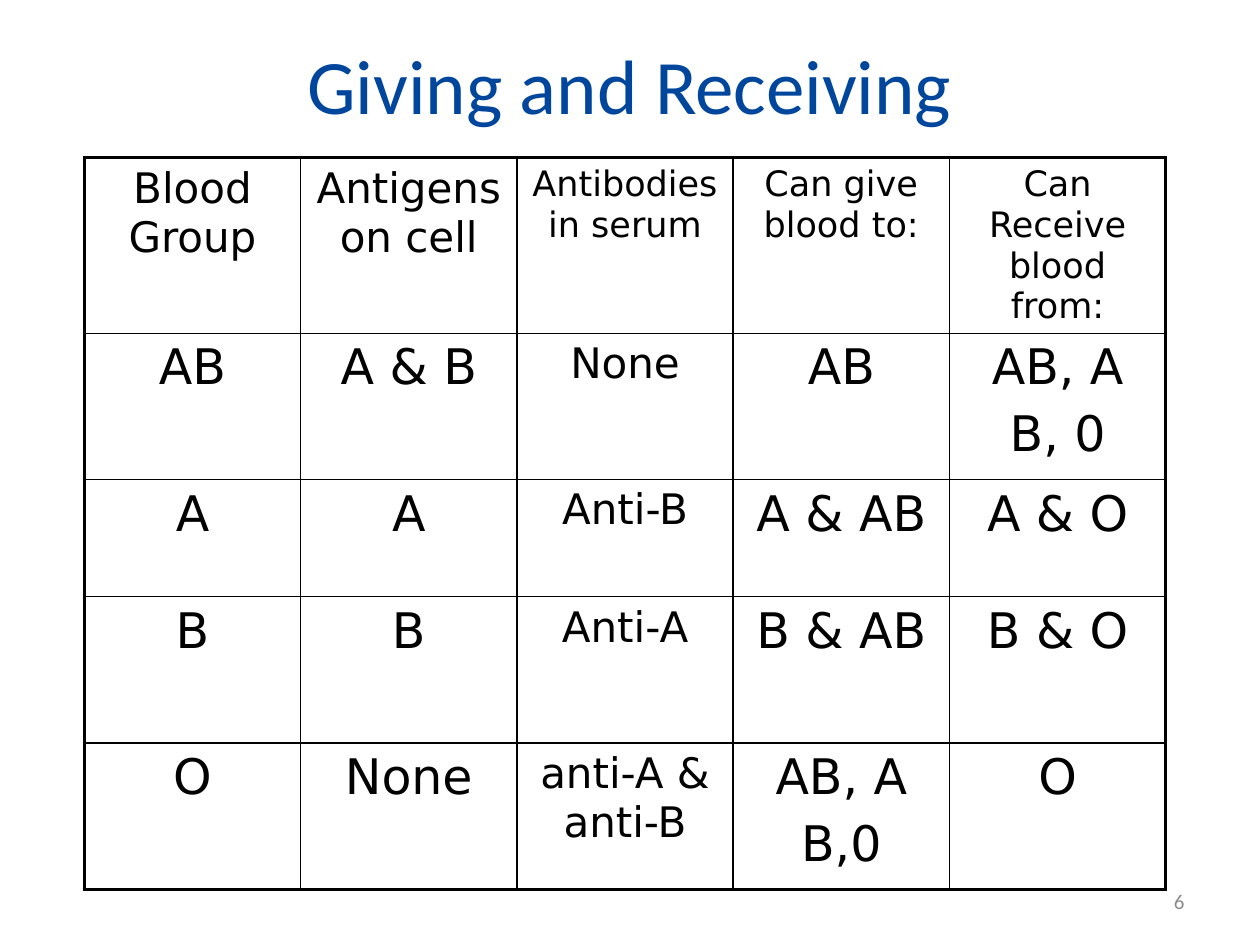
from lxml.etree import SubElement
from pptx import Presentation
from pptx.dml.color import RGBColor
from pptx.enum.text import MSO_ANCHOR, PP_ALIGN
from pptx.oxml.ns import qn
from pptx.util import Cm, Pt

TITLE = "Giving and Receiving"
NUMBER = "6"
ROWS = [
    ["Blood Group", "Antigens on cell", "Antibodies in serum",
     "Can give blood to:", "Can Receive blood from:"],
    ["AB", "A & B", "None", "AB", "AB, A\nB, 0"],
    ["A", "A", "Anti-B", "A & AB", "A & O"],
    ["B", "B", "Anti-A", "B & AB", "B & O"],
    ["O", "None", "anti-A & anti-B", "AB, A\nB,0", "O"],
]
HEAD = [24, 24, 20, 20, 20]
BODY = [28, 28, 24, 28, 28]
HEIGHTS = [3.4, 2.95, 2.36, 2.95, 2.95]
WIDTH = 4.36
THIN, THICK = 1, 2.25
BLACK, BLUE, GREY = "000000", "00469C", "8C8C8C"


def style(frame, size, font, color, align, gap=0):
    for para in frame.paragraphs:
        para.alignment = align
        para.space_before = Pt(size * gap)
        for run in para.runs:
            run.font.size = Pt(size)
            run.font.name = font
            run.font.color.rgb = RGBColor.from_string(color)


def place(shape, left, top, width, height):
    shape.left, shape.top = Cm(left), Cm(top)
    shape.width, shape.height = Cm(width), Cm(height)


def border(cell, side, width):
    line = SubElement(cell._tc.get_or_add_tcPr(), qn("a:ln" + side),
                      w=str(Pt(width)))
    fill = SubElement(line, qn("a:solidFill"))
    SubElement(fill, qn("a:srgbClr"), val=BLACK)


def add_grid(slide):
    count, span = len(ROWS), len(HEAD)
    frame = slide.shapes.add_table(count, span, Cm(1.7), Cm(3.18),
                                   Cm(WIDTH * span), Cm(sum(HEIGHTS)))
    table = frame.table
    table.first_row = table.horz_banding = False
    for col in table.columns:
        col.width = Cm(WIDTH)
    for r, words in enumerate(ROWS):
        table.rows[r].height = Cm(HEIGHTS[r])
        sizes = BODY if r else HEAD
        for c, text in enumerate(words):
            cell = table.cell(r, c)
            cell.text_frame.text = text
            style(cell.text_frame, sizes[c], "DejaVu Sans", BLACK,
                  PP_ALIGN.CENTER, 0.2)
            edges = {"L": c == 0, "R": c == span - 1,
                     "T": r == 0, "B": r == count - 1}
            for side, outer in edges.items():
                border(cell, side, THICK if outer else THIN)
            cell.fill.background()


def main():
    deck = Presentation()
    deck.slide_width, deck.slide_height = Cm(25.4), Cm(19.05)
    slide = deck.slides.add_slide(deck.slide_layouts[5])

    title = slide.shapes.title
    place(title, 1.9, 0.64, 21.6, 2.1)
    title.text_frame.text = TITLE
    title.text_frame.vertical_anchor = MSO_ANCHOR.MIDDLE
    style(title.text_frame, 44, "Calibri", BLUE, PP_ALIGN.CENTER)

    add_grid(slide)

    box = slide.shapes.add_textbox(Cm(18.2), Cm(17.66), Cm(5.93), Cm(1.01))
    box.text_frame.text = NUMBER
    box.text_frame.word_wrap = True
    box.text_frame.vertical_anchor = MSO_ANCHOR.MIDDLE
    style(box.text_frame, 12, "Calibri", GREY, PP_ALIGN.RIGHT)

    deck.save("out.pptx")


if __name__ == "__main__":
    main()
